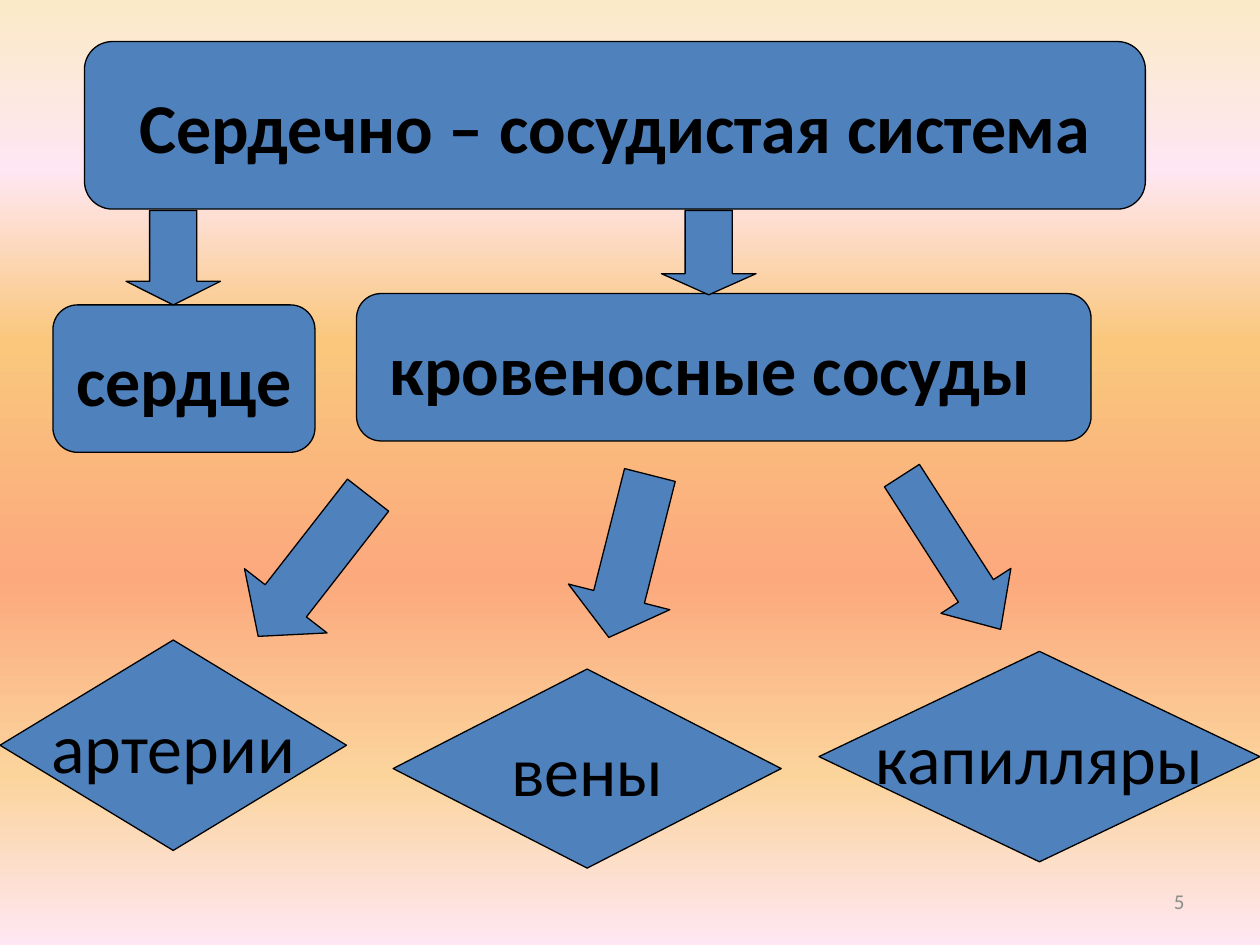
import pptx
import pptx.dml.color
import pptx.enum.shapes
import pptx.enum.text
import pptx.oxml
import pptx.oxml.ns
import pptx.util

SHAPE = pptx.enum.shapes.MSO_SHAPE
ALIGN = pptx.enum.text.PP_ALIGN
ANCHOR = pptx.enum.text.MSO_ANCHOR
Inches, Pt = pptx.util.Inches, pptx.util.Pt

WIDTH, HEIGHT = 10, 7.5
FONT, BLUE, BLACK, GREY = "Calibri", "4F81BD", "000000", "8C8C8C"
BACKGROUND = [(0, "FBEAC7"), (18, "FEE7F2"), (36, "FAC77D"),
              (61, "FBA97D"), (82, "FBD49C"), (100, "FEE7F2")]

# text, (left, top, width, height), right inset that shifts the centred text
BOXES = [
    ("сердце", (0.42, 2.42, 2.08, 1.17), 0.1),
    ("кровеносные сосуды", (2.83, 2.33, 5.83, 1.17), 0.32),
    ("Сердечно – сосудистая система", (0.67, 0.33, 8.42, 1.33), 0.1),
]
VESSELS = [
    ("артерии", (0, 5.08, 2.75, 1.67), 0.1),
    ("вены", (3.12, 5.31, 3.08, 1.58), 0.1),
    ("капилляры", (6.5, 5.17, 3.5, 1.67), 0.1),
]
# (left, top, width, height), rotation, share of the width taken by the head
ARROWS = [
    ((1, 1.67, 0.75, 0.75), 0, 0.25),
    ((5.25, 1.67, 0.75, 0.67), 0, 0.25),
    ((4.58, 3.75, 0.83, 1.33), 14.2, 0.4),
    ((7.22, 3.66, 0.66, 1.45), 327.3, 0.55),
    ((2.07, 3.78, 0.83, 1.42), 37.9, 0.43),
]
PAGE_NUMBER = ("5", (7.17, 6.95, 2.33, 0.4))


def color(value):
    return pptx.dml.color.RGBColor.from_string(value)


def paint_background(slide):
    """Fill the background with a top-to-bottom gradient of several stops."""
    fill = slide.background.fill
    fill.gradient()
    fill.gradient_angle = 270  # counter-clockwise, so first stop is on top
    stops = slide.background._cSld.find(".//" + pptx.oxml.ns.qn("a:gsLst"))
    for stop in list(stops):
        stops.remove(stop)
    for position, value in BACKGROUND:
        stops.append(pptx.oxml.parse_xml(
            f'<a:gs {pptx.oxml.ns.nsdecls("a")} pos="{position * 1000}">'
            f'<a:srgbClr val="{value}"/></a:gs>'))


def add_blue_shape(slide, kind, place):
    shape = slide.shapes.add_shape(kind, *map(Inches, place))
    shape.shadow.inherit = False
    shape.fill.solid()
    shape.fill.fore_color.rgb = color(BLUE)
    shape.line.color.rgb = color(BLACK)
    shape.line.width = Pt(0.75)
    return shape


def write(shape, text, size, value, align, bold=False, wrap=False):
    frame = shape.text_frame
    frame.text = text
    frame.word_wrap = wrap
    frame.vertical_anchor = ANCHOR.MIDDLE
    paragraph = frame.paragraphs[0]
    paragraph.alignment = align
    font = paragraph.runs[0].font
    font.name, font.size, font.bold = FONT, Pt(size), bold
    font.color.rgb = color(value)


def main():
    presentation = pptx.Presentation()
    presentation.slide_width = Inches(WIDTH)
    presentation.slide_height = Inches(HEIGHT)
    slide = presentation.slides.add_slide(presentation.slide_layouts[6])
    paint_background(slide)

    number, place = PAGE_NUMBER
    number_box = slide.shapes.add_textbox(*map(Inches, place))
    write(number_box, number, 12, GREY, ALIGN.RIGHT, wrap=True)

    for kind, items, bold in [
        (SHAPE.FLOWCHART_ALTERNATE_PROCESS, BOXES, True),
        (SHAPE.FLOWCHART_DECISION, VESSELS, False),
    ]:
        for text, place, right_inset in items:
            shape = add_blue_shape(slide, kind, place)
            write(shape, text, 40, BLACK, ALIGN.CENTER, bold)
            shape.text_frame.margin_right = Inches(right_inset)

    for place, rotation, head in ARROWS:
        arrow = add_blue_shape(slide, SHAPE.DOWN_ARROW, place)
        arrow.rotation = rotation
        arrow.adjustments[0] = 0.5
        arrow.adjustments[1] = head

    presentation.save("out.pptx")


if __name__ == "__main__":
    main()
